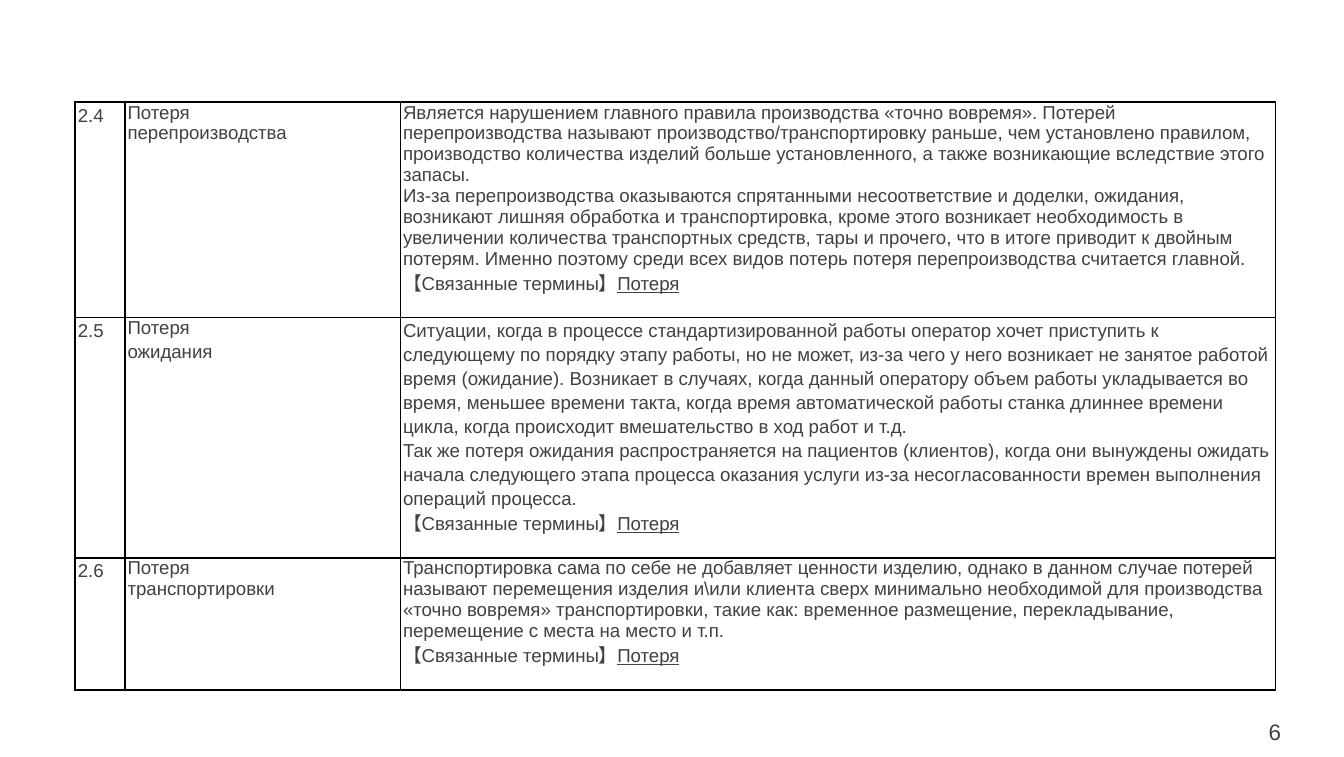
from dataclasses import dataclass

from lxml.etree import SubElement
from pptx import Presentation
from pptx.dml.color import RGBColor
from pptx.enum.text import MSO_ANCHOR, PP_ALIGN
from pptx.oxml.ns import qn
from pptx.util import Inches, Pt

COLORS = {"text": "414042", "border": "000000"}
FONT = "Arial"
WIDE = 1.15
BORDER_WIDTH = Pt(1)
COLUMN_WIDTHS = (0.37, 2.05, 6.51)
RELATED_LABEL = "【Связанные термины】"
RELATED_TERM = "Потеря"


@dataclass(frozen=True)
class Term:
    number: str
    kind: str
    description: tuple[str, ...]
    height: float
    spacing: float | None = None


TERMS = (
    Term("2.4", "перепроизводства", (
        "Является нарушением главного правила производства «точно вовремя». "
        "Потерей перепроизводства называют производство/транспортировку раньше, "
        "чем установлено правилом, производство количества изделий больше "
        "установленного, а также возникающие вследствие этого запасы.",
        "Из-за перепроизводства оказываются спрятанными несоответствие и доделки, "
        "ожидания, возникают лишняя обработка и транспортировка, кроме этого "
        "возникает необходимость в увеличении количества транспортных средств, "
        "тары и прочего, что в итоге приводит к двойным потерям. Именно поэтому "
        "среди всех видов потерь потеря перепроизводства считается главной.",
    ), 1.6),
    Term("2.5", "ожидания", (
        "Ситуации, когда в процессе стандартизированной работы оператор хочет "
        "приступить к следующему по порядку этапу работы, но не может, из-за чего "
        "у него возникает не занятое работой время (ожидание). Возникает в "
        "случаях, когда данный оператору объем работы укладывается во время, "
        "меньшее времени такта, когда время автоматической работы станка длиннее "
        "времени цикла, когда происходит вмешательство в ход работ и т.д.",
        "Так же потеря ожидания распространяется на пациентов (клиентов), когда "
        "они вынуждены ожидать начала следующего этапа процесса оказания услуги "
        "из-за несогласованности времен выполнения операций процесса.",
    ), 1.79, WIDE),
    Term("2.6", "транспортировки", (
        "Транспортировка сама по себе не добавляет ценности изделию, однако в "
        "данном случае потерей называют перемещения изделия и\\или клиента сверх "
        "минимально необходимой для производства «точно вовремя» транспортировки, "
        "такие как: временное размещение, перекладывание, перемещение с места на "
        "место и т.п.",
    ), 0.98),
)


def add_run(paragraph, text: str, size: float = 10, underline: bool = False) -> None:
    run = paragraph.add_run()
    run.text = text
    run.font.name = FONT
    run.font.size = Pt(size)
    run.font.color.rgb = RGBColor.from_string(COLORS["text"])
    if underline:
        run.font.underline = True


def add_line(frame, text: str, spacing: float | None = None) -> None:
    first = frame.paragraphs[0]
    paragraph = frame.add_paragraph() if first.runs else first
    if spacing:
        paragraph.line_spacing = spacing
    add_run(paragraph, text)


def style_cell(cell) -> None:
    cell.margin_left = cell.margin_right = Inches(0.02)
    cell.margin_top = cell.margin_bottom = 0
    properties = cell._tc.get_or_add_tcPr()
    for side in ("a:lnL", "a:lnR", "a:lnT", "a:lnB"):
        line = SubElement(properties, qn(side), w=str(BORDER_WIDTH))
        fill = SubElement(line, qn("a:solidFill"))
        SubElement(fill, qn("a:srgbClr"), val=COLORS["border"])
    cell.fill.background()


def fill_row(table, index: int, term: Term) -> None:
    table.rows[index].height = Inches(term.height)
    cells = [table.cell(index, column) for column in range(len(COLUMN_WIDTHS))]
    for cell in cells:
        style_cell(cell)
    number, name, description = (cell.text_frame for cell in cells)

    add_line(number, term.number, WIDE)
    add_line(name, "Потеря")
    add_line(name, term.kind, term.spacing)
    for text in term.description:
        add_line(description, text, term.spacing)
    add_line(description, RELATED_LABEL)
    add_run(description.paragraphs[-1], RELATED_TERM, underline=True)


def add_glossary(slide) -> None:
    table = slide.shapes.add_table(
        len(TERMS), len(COLUMN_WIDTHS), Inches(0.56), Inches(0.76),
        Inches(sum(COLUMN_WIDTHS)), Inches(sum(term.height for term in TERMS)),
    ).table
    table.first_row = table.horz_banding = False
    for column, width in zip(table.columns, COLUMN_WIDTHS):
        column.width = Inches(width)
    for index, term in enumerate(TERMS):
        fill_row(table, index, term)


def add_page_number(slide, number: str) -> None:
    frame = slide.shapes.add_textbox(
        Inches(9.09), Inches(5.29), Inches(0.79), Inches(0.3)).text_frame
    frame.word_wrap = True
    frame.vertical_anchor = MSO_ANCHOR.MIDDLE
    frame.margin_left = frame.margin_right = Inches(0.07)
    frame.margin_top = frame.margin_bottom = Inches(0.04)
    frame.paragraphs[0].alignment = PP_ALIGN.CENTER
    add_run(frame.paragraphs[0], number, size=12)


def main() -> None:
    presentation = Presentation()
    presentation.slide_width = Inches(10)
    presentation.slide_height = Inches(5.63)
    # The slide has no title, so it takes the blank layout
    slide = presentation.slides.add_slide(presentation.slide_layouts[6])

    # Page number and glossary table
    add_page_number(slide, "6")
    add_glossary(slide)
    presentation.save("out.pptx")


if __name__ == "__main__":
    main()
